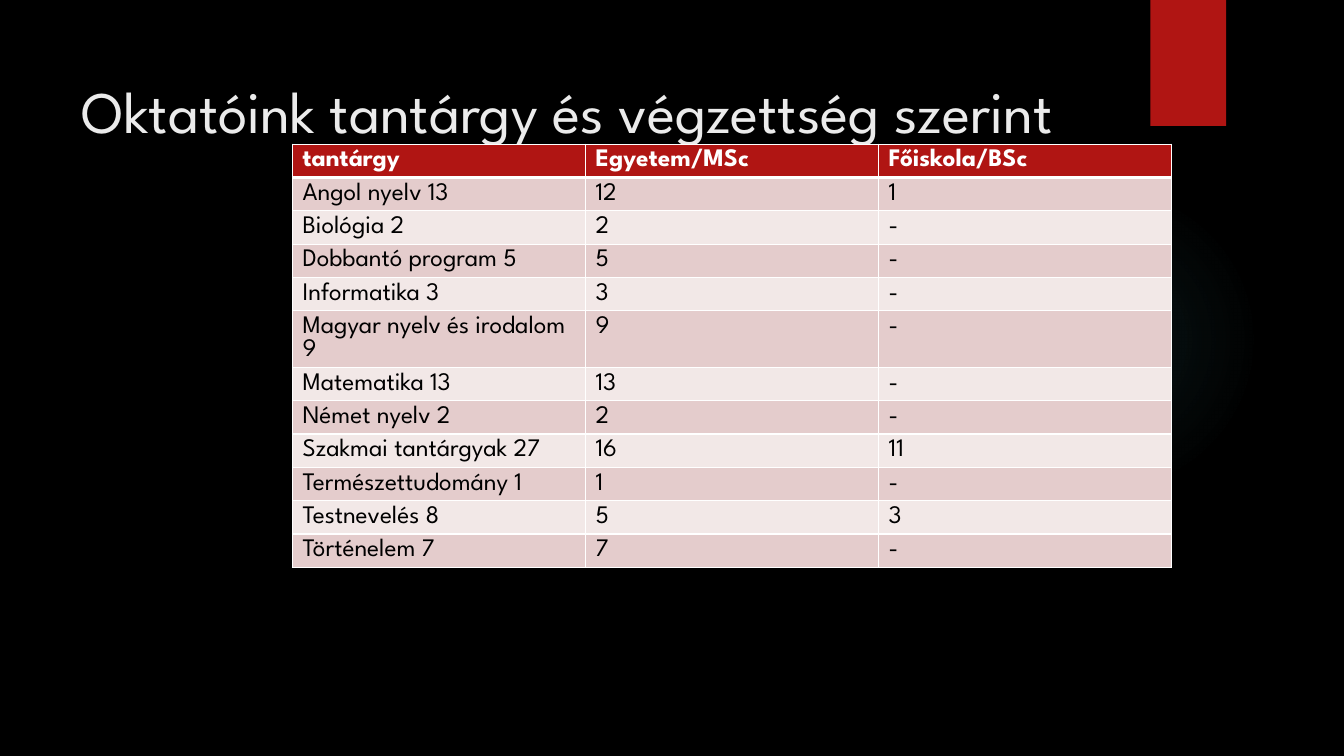
from dataclasses import dataclass

from lxml.etree import SubElement
from pptx import Presentation
from pptx.dml.color import RGBColor
from pptx.enum.shapes import MSO_SHAPE as Preset
from pptx.enum.text import MSO_ANCHOR as Anchor, MSO_AUTO_SIZE as AutoSize, PP_ALIGN as Align
from pptx.oxml import parse_xml
from pptx.oxml.ns import nsdecls, qn
from pptx.util import Inches, Pt

SLIDE_WIDTH, SLIDE_HEIGHT = Inches(13.33), Inches(7.5)


@dataclass(frozen=True)
class Theme:
    font: str = "League Spartan"
    title_size: int = 42
    table_size: int = 18
    background: str = "000000"
    title: str = "EBEBEB"
    accent: str = "B01513"
    glow: str = "50B9C1"
    rule: str = "FFFFFF"
    header_text: str = "FFFFFF"
    body_text: str = "000000"
    bands: tuple = ("E4CCCC", "F2E8E7")


@dataclass(frozen=True)
class Box:
    """Percentages of the slide's width and height."""
    left: float
    top: float
    width: float
    height: float

    def place(self):
        return (across(self.left), down(self.top), across(self.width), down(self.height))


THEME = Theme()
GLOW_BOX = Box(70.59, 24.4, 23.11, 41.07)
RIBBON_BOX = Box(85.6, 0, 5.63, 16.67)
TITLE_BOX = Box(5.33, 6.67, 77.19, 20.4)
TABLE_BOX = Box(21.76, 19.07, 65.42, 52.8)

TITLE = "Oktatóink tantárgy és végzettség szerint"
TEACHERS = [
    ("tantárgy", "Egyetem/MSc", "Főiskola/BSc"),
    ("Angol nyelv 13", "12", "1"),
    ("Biológia 2", "2", "-"),
    ("Dobbantó program 5", "5", "-"),
    ("Informatika 3", "3", "-"),
    ("Magyar nyelv és irodalom 9", "9", "-"),
    ("Matematika 13", "13", "-"),
    ("Német nyelv 2", "2", "-"),
    ("Szakmai tantárgyak 27", "16", "11"),
    ("Természettudomány 1", "1", "-"),
    ("Testnevelés 8", "5", "3"),
    ("Történelem 7", "7", "-"),
]


def across(percent):
    return round(SLIDE_WIDTH * percent / 100)


def down(percent):
    return round(SLIDE_HEIGHT * percent / 100)


def color(code):
    return RGBColor.from_string(code)


def write(frame, words, size, code, bold=False):
    run = frame.paragraphs[0].add_run()
    run.text = words
    run.font.name = THEME.font
    run.font.size = Pt(size)
    run.font.bold = bold
    run.font.color.rgb = color(code)


def add_glow(slide, box):
    glow = slide.shapes.add_shape(Preset.OVAL, *box.place())
    glow.shadow.inherit = False
    glow.line.fill.background()
    stops = "".join(
        f'<a:gs pos="{position}000"><a:srgbClr val="{THEME.glow}">'
        f'<a:alpha val="{opacity}000"/></a:srgbClr></a:gs>'
        for position, opacity in ((0, 7), (36, 6), (69, 0))
    )
    gradient = parse_xml(
        f'<a:gradFill {nsdecls("a")} rotWithShape="1"><a:gsLst>{stops}</a:gsLst>'
        '<a:path path="circle"><a:fillToRect l="50000" t="50000" r="50000" b="50000"/>'
        '</a:path></a:gradFill>'
    )
    glow._element.spPr.find(qn("a:prstGeom")).addnext(gradient)


def add_ribbon(slide, box):
    ribbon = slide.shapes.add_shape(Preset.RECTANGLE, *box.place())
    ribbon.shadow.inherit = False
    ribbon.fill.solid()
    ribbon.fill.fore_color.rgb = color(THEME.accent)
    ribbon.line.fill.background()
    effects = ribbon._element.spPr.find(qn("a:effectLst"))
    shadow = SubElement(effects, qn("a:outerShdw"), blurRad=str(Pt(3)), dist=str(Pt(2)),
                        dir="5400000", rotWithShape="0")
    tint = SubElement(shadow, qn("a:srgbClr"), val="000000")
    SubElement(tint, qn("a:alpha"), val="45000")


def add_title(slide, box):
    heading = slide.shapes.title
    heading.left, heading.top, heading.width, heading.height = box.place()
    frame = heading.text_frame
    frame.word_wrap = True
    frame.auto_size = AutoSize.NONE
    frame.vertical_anchor = Anchor.TOP
    frame.margin_top = down(3.2)
    frame.paragraphs[0].alignment = Align.LEFT
    write(frame, TITLE, THEME.title_size, THEME.title)


def rule_cell(cell, row):
    top, bottom = (3 if row == 1 else 1), (3 if row == 0 else 1)
    edges = (("L", 1), ("R", 1), ("T", top), ("B", bottom))
    for order, (side, points) in enumerate(edges):
        edge = parse_xml(
            f'<a:ln{side} {nsdecls("a")} w="{Pt(points)}"><a:solidFill>'
            f'<a:srgbClr val="{THEME.rule}"/></a:solidFill></a:ln{side}>'
        )
        cell._tc.get_or_add_tcPr().insert(order, edge)


def add_teacher_table(slide, box):
    grid = slide.shapes.add_table(len(TEACHERS), len(TEACHERS[0]), *box.place()).table
    for column in grid.columns:
        column.width = across(box.width / len(TEACHERS[0]))
    for row, entries in enumerate(TEACHERS):
        grid.rows[row].height = down(4.4)
        header = row == 0
        for column, words in enumerate(entries):
            cell = grid.cell(row, column)
            cell.fill.solid()
            cell.fill.fore_color.rgb = color(THEME.accent if header else THEME.bands[(row - 1) % 2])
            rule_cell(cell, row)
            write(cell.text_frame, words, THEME.table_size,
                  THEME.header_text if header else THEME.body_text, header)


def main():
    deck = Presentation()
    deck.slide_width, deck.slide_height = SLIDE_WIDTH, SLIDE_HEIGHT
    slide = deck.slides.add_slide(deck.slide_layouts.get_by_name("Title Only"))
    slide.background.fill.solid()
    slide.background.fill.fore_color.rgb = color(THEME.background)
    add_glow(slide, GLOW_BOX)
    add_ribbon(slide, RIBBON_BOX)
    add_title(slide, TITLE_BOX)
    add_teacher_table(slide, TABLE_BOX)
    deck.save("out.pptx")


if __name__ == "__main__":
    main()
